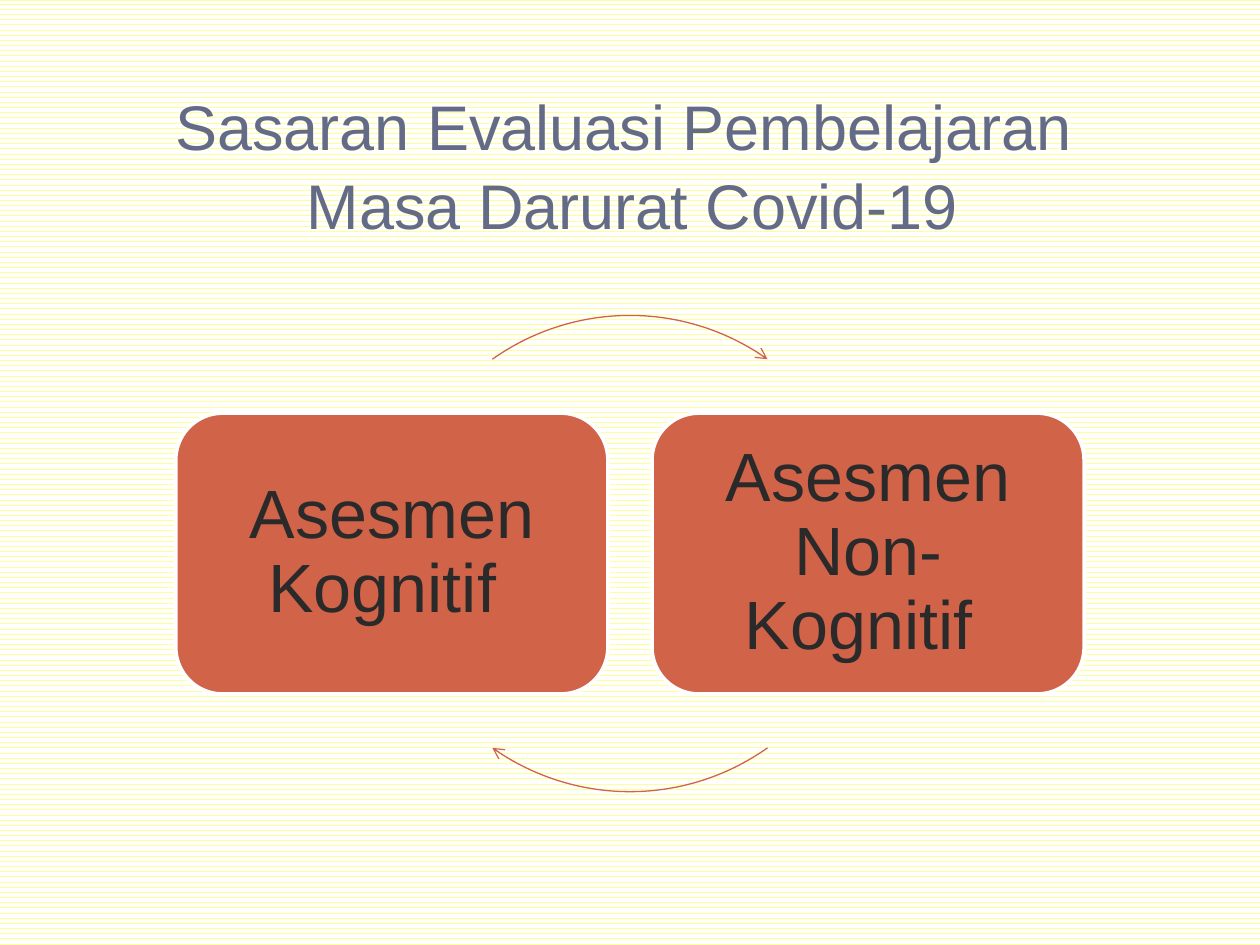
from dataclasses import dataclass

from lxml.etree import SubElement
from pptx import Presentation
from pptx.dml.color import RGBColor
from pptx.enum.dml import MSO_PATTERN
from pptx.enum.shapes import MSO_SHAPE
from pptx.enum.text import MSO_ANCHOR, PP_ALIGN
from pptx.oxml.ns import qn
from pptx.slide import Slide
from pptx.util import Cm, Pt

ACCENT = "D16349"
WHITE = "FFFFFF"
CENTER_X, CENTER_Y = 12.7, 11.16
CARD_W, CARD_H, CARD_GAP = 8.71, 5.66, 0.89
RADIUS = 4.8
ARC_HALF_ANGLE = 35.3


@dataclass
class Card:
    text: str
    left: float


@dataclass
class Arc:
    middle_angle: float


CARDS = [
    Card("Asesmen Kognitif ", CENTER_X - CARD_GAP / 2 - CARD_W),
    Card("Asesmen Non-Kognitif ", CENTER_X + CARD_GAP / 2),
]
ARCS = [Arc(270), Arc(90)]


def rgb(value: str) -> RGBColor:
    return RGBColor.from_string(value)


def set_background(s: Slide) -> None:
    fill = s.background.fill
    fill.patterned()
    fill.pattern = MSO_PATTERN.DARK_HORIZONTAL
    fill.fore_color.rgb = rgb(WHITE)
    fill.back_color.rgb = rgb("FFFF99")


def format_paragraph(p, size: float, color: str, spacing: float) -> None:
    p.alignment = PP_ALIGN.CENTER
    p.line_spacing = spacing
    p.font.name = "Arial"
    p.font.size = Pt(size)
    p.font.color.rgb = rgb(color)


def add_title(s: Slide, text: str) -> None:
    sp = s.shapes.title
    sp.left, sp.top, sp.width, sp.height = Cm(1.32), Cm(1.52), Cm(22.86), Cm(3.53)
    tf = sp.text_frame
    tf.vertical_anchor = MSO_ANCHOR.MIDDLE
    tf.text = text
    format_paragraph(tf.paragraphs[0], 36, "646B86", 1.05)


def add_card(s: Slide, card: Card) -> None:
    sp = s.shapes.add_shape(
        MSO_SHAPE.ROUNDED_RECTANGLE,
        Cm(card.left), Cm(CENTER_Y - CARD_H / 2), Cm(CARD_W), Cm(CARD_H),
    )
    sp.shadow.inherit = False
    sp.fill.solid()
    sp.fill.fore_color.rgb = rgb(ACCENT)
    sp.line.color.rgb = rgb(WHITE)
    sp.line.width = Pt(2)
    tf = sp.text_frame
    tf.word_wrap = True
    tf.vertical_anchor = MSO_ANCHOR.MIDDLE
    tf.margin_left = tf.margin_right = tf.margin_top = tf.margin_bottom = Cm(0.41)
    tf.text = card.text
    format_paragraph(tf.paragraphs[0], 39, "2A2A2A", 0.9)


def add_arc(s: Slide, arc: Arc) -> None:
    sp = s.shapes.add_shape(
        MSO_SHAPE.ARC,
        Cm(CENTER_X - RADIUS), Cm(CENTER_Y - RADIUS), Cm(2 * RADIUS), Cm(2 * RADIUS),
    )
    sp.adjustments[0] = (arc.middle_angle - ARC_HALF_ANGLE) * 0.6
    sp.adjustments[1] = (arc.middle_angle + ARC_HALF_ANGLE) * 0.6
    sp.shadow.inherit = False
    sp.fill.background()
    sp.line.color.rgb = rgb(ACCENT)
    sp.line.width = Pt(0.75)
    SubElement(sp.line._get_or_add_ln(), qn("a:tailEnd"), type="arrow")


def main() -> None:
    prs = Presentation()
    prs.slide_width, prs.slide_height = Cm(25.4), Cm(19.05)
    s = prs.slides.add_slide(prs.slide_layouts[5])
    set_background(s)
    add_title(s, "Sasaran Evaluasi Pembelajaran \vMasa Darurat Covid-19")
    for card, arc in zip(CARDS, ARCS):
        add_card(s, card)
        add_arc(s, arc)
    prs.save("out.pptx")


if __name__ == "__main__":
    main()
